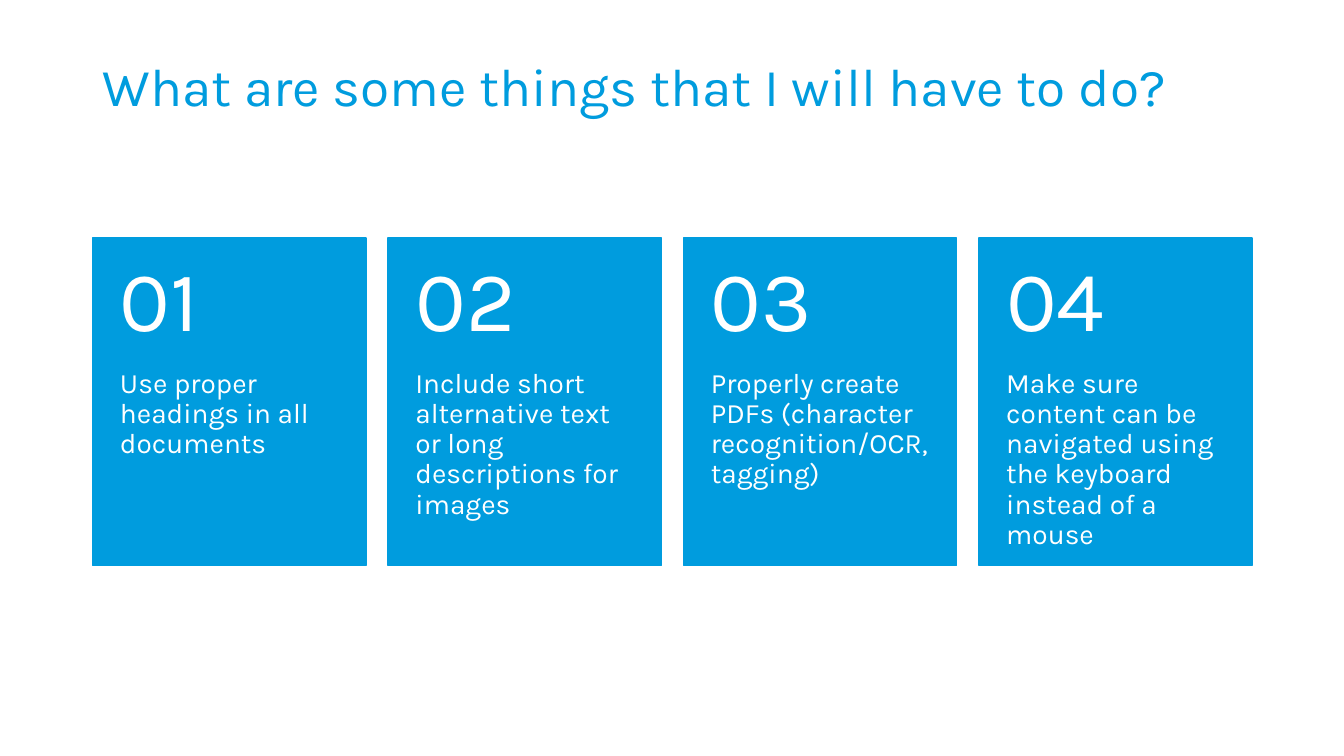
from dataclasses import dataclass

from pptx import Presentation
from pptx.dml.color import RGBColor
from pptx.enum.shapes import MSO_SHAPE
from pptx.enum.text import MSO_ANCHOR, MSO_AUTO_SIZE, PP_ALIGN
from pptx.util import Inches, Pt

TITLE = "What are some things that I will have to do?"
TASKS = [
    "Use proper headings in all documents",
    "Include short alternative text or long descriptions for images",
    "Properly create PDFs (character recognition/OCR, tagging)",
    "Make sure content can be navigated using the keyboard instead of a mouse",
]

RECTANGLE = MSO_SHAPE.RECTANGLE
TOP, MIDDLE = MSO_ANCHOR.TOP, MSO_ANCHOR.MIDDLE
LEFT = PP_ALIGN.LEFT
NO_AUTO_SIZE = MSO_AUTO_SIZE.NONE
TITLE_ONLY = 5


@dataclass(frozen=True)
class Theme:
    font: str = "Karla"
    blue: RGBColor = RGBColor(0x00, 0x9C, 0xDE)
    white: RGBColor = RGBColor(0xFF, 0xFF, 0xFF)
    title_size: int = 38
    number_size: int = 61
    task_size: int = 20
    line_spacing: float = 0.9


THEME = Theme()

# Slide layout in inches
CONTENT_LEFT, CONTENT_WIDTH = 0.92, 11.5
TITLE_TOP, TITLE_HEIGHT = 0.4, 0.97
CARD_TOP, CARD_WIDTH, CARD_HEIGHT = 2.36, 2.71, 3.25
NUMBER_HEIGHT = 1.3
CARD_PITCH = (CONTENT_WIDTH - CARD_WIDTH) / (len(TASKS) - 1)
NUMBER_MARGINS = (0.27, 0.18, 0.27, 0.18)
TASK_MARGINS = (0.27, 0, 0.27, 0.36)
TITLE_MARGINS = (0.1, 0.05, 0.1, 0.05)


def write_text(shape, text, size, color, anchor, margins):
    """Fill a shape with one left-aligned run; margins are left, top, right, bottom."""
    frame = shape.text_frame
    frame.word_wrap = True
    frame.auto_size = NO_AUTO_SIZE
    frame.vertical_anchor = anchor
    (frame.margin_left, frame.margin_top,
     frame.margin_right, frame.margin_bottom) = map(Inches, margins)
    paragraph = frame.paragraphs[0]
    paragraph.alignment = LEFT
    paragraph.line_spacing = THEME.line_spacing
    paragraph.space_before = Pt(0)
    run = paragraph.add_run()
    run.text = text
    run.font.name = THEME.font
    run.font.size = Pt(size)
    run.font.color.rgb = color


def add_title(slide):
    title = slide.shapes.title
    title.left, title.top = Inches(CONTENT_LEFT), Inches(TITLE_TOP)
    title.width, title.height = Inches(CONTENT_WIDTH), Inches(TITLE_HEIGHT)
    write_text(title, TITLE, THEME.title_size, THEME.blue, MIDDLE, TITLE_MARGINS)


def add_card(slide, index, task):
    left = Inches(CONTENT_LEFT + index * CARD_PITCH)
    top, width = Inches(CARD_TOP), Inches(CARD_WIDTH)
    group = slide.shapes.add_group_shape()

    card = group.shapes.add_shape(RECTANGLE, left, top, width, Inches(CARD_HEIGHT))
    card.shadow.inherit = False
    card.fill.solid()
    card.fill.fore_color.rgb = THEME.blue
    card.line.color.rgb = THEME.blue
    card.line.width = Pt(1)

    task_box = group.shapes.add_textbox(
        left, Inches(CARD_TOP + NUMBER_HEIGHT), width, Inches(CARD_HEIGHT - NUMBER_HEIGHT))
    write_text(task_box, task, THEME.task_size, THEME.white, TOP, TASK_MARGINS)

    number_box = group.shapes.add_textbox(left, top, width, Inches(NUMBER_HEIGHT))
    write_text(number_box, f"{index + 1:02d}", THEME.number_size, THEME.white,
               MIDDLE, NUMBER_MARGINS)


def main():
    presentation = Presentation()
    presentation.slide_width = Inches(13.33)
    presentation.slide_height = Inches(7.5)
    slide = presentation.slides.add_slide(presentation.slide_layouts[TITLE_ONLY])
    add_title(slide)
    for index, task in enumerate(TASKS):
        add_card(slide, index, task)
    presentation.save("out.pptx")


if __name__ == "__main__":
    main()
